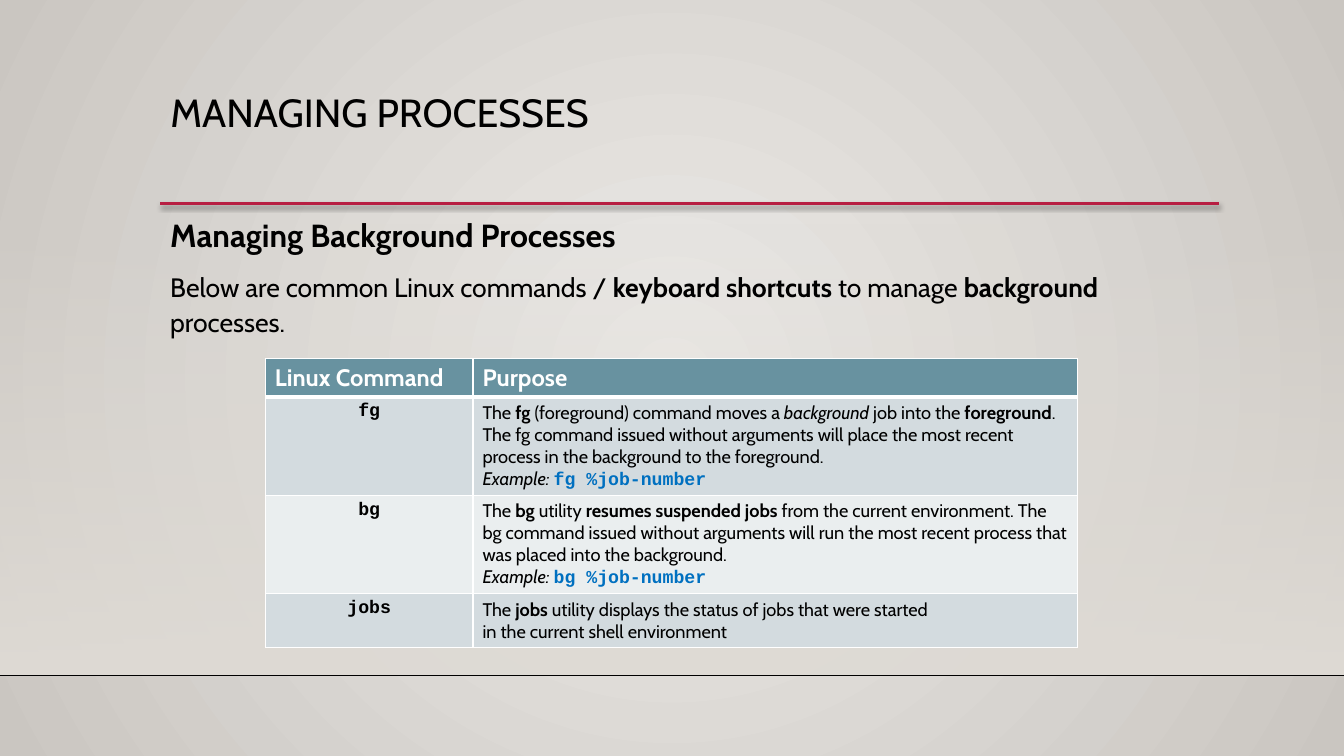
from lxml import etree
from pptx import Presentation
from pptx import util as u
from pptx.dml.color import RGBColor
from pptx.enum import shapes, text
from pptx.oxml import parse_xml
from pptx.oxml.ns import nsdecls, qn

BLACK = RGBColor(0x00, 0x00, 0x00)
WHITE = RGBColor(0xFF, 0xFF, 0xFF)
CRIMSON = RGBColor(0xB7, 0x1E, 0x42)
CODE_BLUE = RGBColor(0x00, 0x70, 0xC0)
TEAL = RGBColor(0x68, 0x92, 0xA0)
BAND_DARK = RGBColor(0xD3, 0xDB, 0xDF)
BAND_LIGHT = RGBColor(0xEA, 0xEE, 0xEF)
GLOW_INNER = RGBColor(0xEC, 0xEA, 0xE7)
GLOW_OUTER = RGBColor(0xCA, 0xC6, 0xC1)
HAZE = RGBColor(0xDF, 0xDB, 0xD5)

BODY_FONT = "Cabin"
CODE_FONT = "Courier New"
BOLD = {"bold": True}
ITALIC = {"italic": True}
CODE = {"bold": True, "font": CODE_FONT}
BLUE_CODE = {**CODE, "color": CODE_BLUE}
BREAK = ("\n", {})

COMMANDS = [
    ("fg", [("The ", {}), ("fg", BOLD), (" (foreground) command moves a ", {}),
            ("background", ITALIC), (" job into the ", {}), ("foreground", BOLD),
            (". The fg command issued without arguments will place the most recent "
             "process in the background to the foreground.", {}),
            BREAK, ("Example: ", ITALIC), ("fg %job-number", BLUE_CODE)]),
    ("bg", [("The ", {}), ("bg", BOLD), (" utility ", {}),
            ("resumes suspended jobs ", BOLD),
            ("from the current environment. The bg command issued without arguments "
             "will run the most recent process that was placed into the background.", {}),
            BREAK, ("Example: ", ITALIC), ("bg %job-number", BLUE_CODE)]),
    ("jobs", [("The ", {}), ("jobs", BOLD),
              (" utility displays the status of jobs that were started", {}),
              BREAK, ("in the current shell environment", {})]),
]


class SlideBuilder:
    """Adds styled elements to one slide."""

    def __init__(self, deck):
        self.page = deck.slides.add_slide(deck.slide_layouts[5])

    def background(self, inner, outer):
        fill = self.page.background.fill
        fill.gradient()
        for stop, color, place in zip(fill.gradient_stops, (inner, outer), (0, 1)):
            stop.color.rgb = color
            stop.position = place
        gradient = self.page._element.find(".//" + qn("a:gradFill"))
        gradient.replace(gradient.find(qn("a:lin")), parse_xml(
            f'<a:path {nsdecls("a")} path="circle">'
            '<a:fillToRect l="50000" t="50000" r="50000" b="50000"/></a:path>'))

    def haze(self, left, top, width, height, color):
        shape = self.page.shapes.add_shape(
            shapes.MSO_SHAPE.RECTANGLE, u.Cm(left), u.Cm(top), u.Cm(width), u.Cm(height))
        shape.shadow.inherit = False
        shape.line.fill.background()
        shape.fill.gradient()
        shape.fill.gradient_angle = 270
        for place, stop in enumerate(shape.fill.gradient_stops):
            stop.color.rgb = color
            stop.position = place
        clear_color = shape._element.spPr.find(".//" + qn("a:srgbClr"))
        etree.SubElement(clear_color, qn("a:alpha"), val="0")

    def rule(self, left, right, y, color, weight, shadow=False):
        line = self.page.shapes.add_connector(
            shapes.MSO_CONNECTOR.STRAIGHT, u.Cm(left), u.Cm(y), u.Cm(right), u.Cm(y))
        line.line.color.rgb = color
        line.line.width = u.Pt(weight)
        effects = etree.SubElement(line._element.spPr, qn("a:effectLst"))
        if shadow:
            effects.append(parse_xml(
                f'<a:outerShdw {nsdecls("a")} blurRad="{u.Pt(3.1)}" dist="{u.Pt(1.8)}" '
                'dir="5400000" rotWithShape="0"><a:srgbClr val="000000">'
                '<a:alpha val="35000"/></a:srgbClr></a:outerShdw>'))

    def add_spans(self, para, spans, size, color=BLACK):
        for words, style in spans:
            if words == "\n":
                para.add_line_break()
                continue
            span = para.add_run()
            span.text = words
            span.font.size = u.Pt(size)
            span.font.name = style.get("font", BODY_FONT)
            span.font.bold = style.get("bold", False)
            span.font.italic = style.get("italic", False)
            span.font.color.rgb = style.get("color", color)

    def fill_box(self, box, left, top, width, height, paragraphs, line_spacing):
        box.left, box.top = u.Cm(left), u.Cm(top)
        box.width, box.height = u.Cm(width), u.Cm(height)
        frame = box.text_frame
        frame.word_wrap = True
        frame.auto_size = text.MSO_AUTO_SIZE.NONE
        frame.vertical_anchor = text.MSO_ANCHOR.TOP
        for index, (spans, size) in enumerate(paragraphs):
            para = frame.add_paragraph() if index else frame.paragraphs[0]
            para.alignment = text.PP_ALIGN.LEFT
            para.line_spacing = line_spacing
            para.space_before = u.Pt(10 if index else 0)
            self.add_spans(para, spans, size)

    def title(self, *place, words, size):
        self.fill_box(self.page.shapes.title, *place, [([(words, {})], size)], 0.9)

    def text_box(self, *place, paragraphs):
        box = self.page.shapes.add_textbox(0, 0, 0, 0)
        self.fill_box(box, *place, paragraphs, 1.1)

    def cell(self, cell, spans, size, color, fill, align, thick_edge=None):
        cell.margin_left = cell.margin_right = u.Cm(0.24)
        cell.margin_top = cell.margin_bottom = u.Cm(0.12)
        properties = cell._tc.get_or_add_tcPr()
        for edge in ("lnL", "lnR", "lnT", "lnB"):
            weight = u.Pt(3 if edge == thick_edge else 0.96)
            properties.append(parse_xml(
                f'<a:{edge} {nsdecls("a")} w="{weight}"><a:solidFill>'
                f'<a:srgbClr val="{WHITE}"/></a:solidFill></a:{edge}>'))
        cell.fill.solid()
        cell.fill.fore_color.rgb = fill
        para = cell.text_frame.paragraphs[0]
        para.alignment = align
        self.add_spans(para, spans, size, color)

    def command_table(self, left, top, widths, heights, headings, commands):
        table = self.page.shapes.add_table(
            len(heights), len(widths), u.Cm(left), u.Cm(top),
            u.Cm(sum(widths)), u.Cm(sum(heights))).table
        table.first_row = table.horz_banding = False
        for column, width in zip(table.columns, widths):
            column.width = u.Cm(width)
        for row, height in zip(table.rows, heights):
            row.height = u.Cm(height)
        for index, heading in enumerate(headings):
            self.cell(table.cell(0, index), [(heading, BOLD)], 17, WHITE, TEAL,
                      text.PP_ALIGN.LEFT, "lnB")
        for row, (name, purpose) in enumerate(commands, 1):
            band = BAND_DARK if row % 2 else BAND_LIGHT
            edge = "lnT" if row == 1 else None
            self.cell(table.cell(row, 0), [(name, CODE)], 13, BLACK, band,
                      text.PP_ALIGN.CENTER, edge)
            self.cell(table.cell(row, 1), purpose, 13, BLACK, band,
                      text.PP_ALIGN.LEFT, edge)


def main():
    deck = Presentation()
    deck.slide_width, deck.slide_height = u.Cm(33.87), u.Cm(19.05)
    slide = SlideBuilder(deck)
    slide.background(GLOW_INNER, GLOW_OUTER)
    slide.haze(0, 5.61, 33.87, 11.4, HAZE)
    slide.rule(0, 33.87, 17.02, BLACK, 1)
    slide.rule(4.04, 30.73, 5.13, CRIMSON, 2.5, shadow=True)
    slide.title(4.04, 2.24, 26.67, 2.92, words="MANAGING PROCESSES", size=28)
    slide.text_box(4.04, 5.21, 26.67, 3.56, paragraphs=[
        ([("Managing Background Processes", BOLD)], 22.8),
        ([("Below are common Linux commands / ", {}), ("keyboard shortcuts ", BOLD),
          ("to manage ", {}), ("background", BOLD), (" processes.", {})], 19),
    ])
    slide.command_table(6.69, 9.03, [5.23, 15.24], [0.94, 2.41, 2.41, 1.32],
                        ["Linux Command", "Purpose"], COMMANDS)
    deck.save("out.pptx")


if __name__ == "__main__":
    main()
